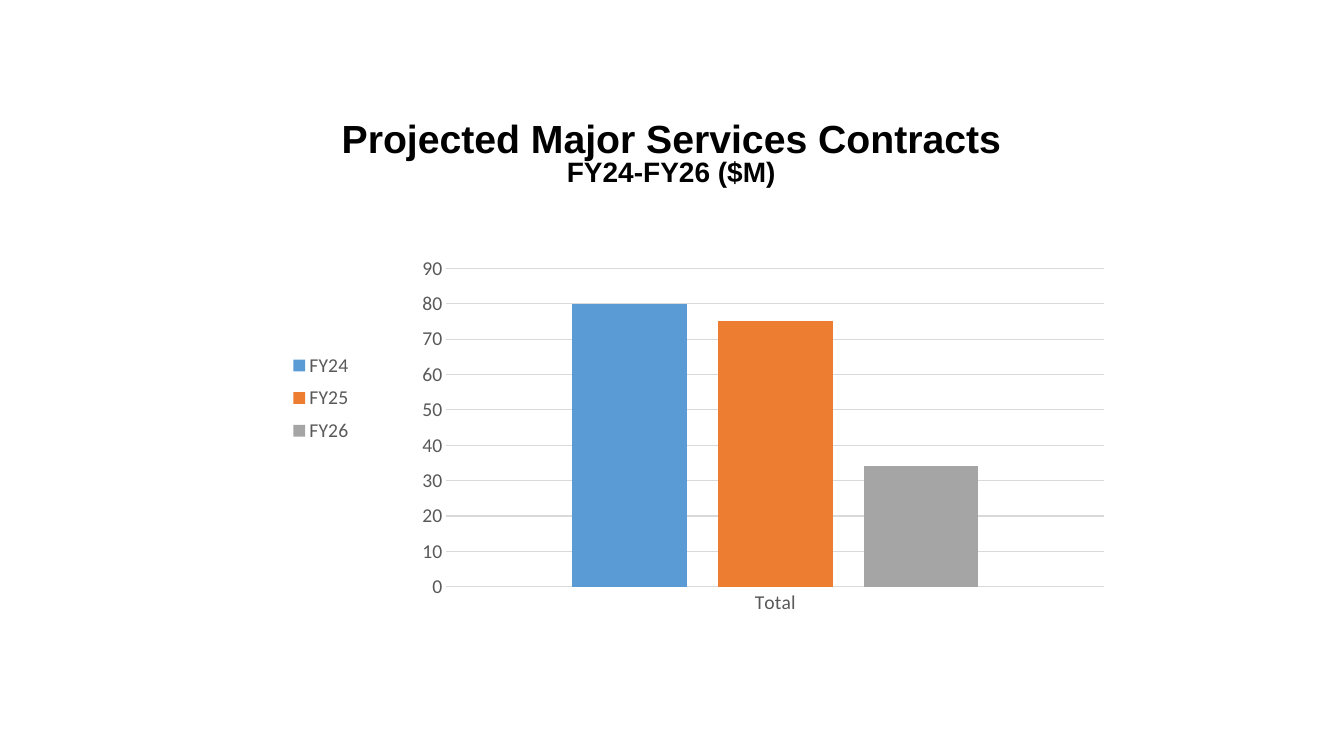
from dataclasses import dataclass

from lxml.etree import SubElement
from pptx import Presentation
from pptx.chart.data import CategoryChartData
from pptx.dml.color import RGBColor
from pptx.enum.chart import XL_CHART_TYPE, XL_LEGEND_POSITION, XL_TICK_MARK
from pptx.enum.text import MSO_ANCHOR, PP_ALIGN
from pptx.oxml import parse_xml
from pptx.oxml.ns import nsdecls, qn
from pptx.util import Pt

GREY_TEXT = "595959"
GREY_LINE = "D9D9D9"


@dataclass
class FiscalYear:
    name: str
    total: int
    fill: str


YEARS = [
    FiscalYear("FY24", 80, "5B9BD5"),
    FiscalYear("FY25", 75, "ED7D31"),
    FiscalYear("FY26", 34, "A5A5A5"),
]


def color(value: str) -> RGBColor:
    return RGBColor.from_string(value)


def set_font(font, *, name: str, size: float, fill: str, bold: bool = False) -> None:
    font.name, font.size, font.bold = name, Pt(size), bold
    font.color.rgb = color(fill)


def add_text(p, text: str, **fmt) -> None:
    r = p.add_run()
    r.text = text
    set_font(r.font, **fmt)


def set_line(line, fill: str) -> None:
    line.color.rgb = color(fill)
    line.width = Pt(0.75)


def set_layout(parent, after, x: float, y: float, w: float, h: float, inner: bool = False) -> None:
    """Place a chart part by fractions of the chart's size."""
    for old in parent.findall(qn("c:layout")):
        parent.remove(old)
    layout = parse_xml(f"<c:layout {nsdecls('c')}/>")
    manual = SubElement(layout, qn("c:manualLayout"))
    target = [("layoutTarget", "inner")] if inner else []
    modes = [("xMode", "edge"), ("yMode", "edge")]
    for tag, val in target + modes + [("x", x), ("y", y), ("w", w), ("h", h)]:
        SubElement(manual, qn(f"c:{tag}")).set("val", str(val))
    if after is None:
        parent.insert(0, layout)
    else:
        after.addnext(layout)


def add_title(s) -> None:
    tf = s.shapes.add_textbox(Pt(88.5), Pt(84.25), Pt(782), Pt(53.25)).text_frame
    tf.word_wrap = True
    tf.vertical_anchor = MSO_ANCHOR.MIDDLE
    p = tf.paragraphs[0]
    p.alignment = PP_ALIGN.CENTER
    p.line_spacing = 0.8
    fmt = dict(name="Arial", fill="000000", bold=True)
    add_text(p, "Projected Major Services Contracts", size=28, **fmt)
    p.add_line_break()
    add_text(p, "FY24-FY26 ($M)", size=20, **fmt)


def add_contract_chart(s) -> None:
    data = CategoryChartData()
    data.categories = ["Total"]
    for year in YEARS:
        data.add_series(year.name, [year.total])
    chart = s.shapes.add_chart(
        XL_CHART_TYPE.COLUMN_CLUSTERED, Pt(170.6), Pt(31.7), Pt(618.5), Pt(421.2), data
    ).chart
    chart.has_title = False
    set_font(chart.font, name="Calibri", size=10, fill="000000")
    label = dict(name="Calibri", size=14, fill=GREY_TEXT)

    # Columns
    plot = chart.plots[0]
    plot.gap_width, plot.overlap, plot.vary_by_categories = 219, -27, False
    for series, year in zip(plot.series, YEARS):
        series.format.fill.solid()
        series.format.fill.fore_color.rgb = color(year.fill)

    # Axes
    for axis in (chart.category_axis, chart.value_axis):
        axis.major_tick_mark = axis.minor_tick_mark = XL_TICK_MARK.NONE
        set_font(axis.tick_labels.font, **label)
    set_line(chart.category_axis.format.line, GREY_LINE)
    values = chart.value_axis
    values.minimum_scale, values.maximum_scale, values.major_unit = 0, 90, 10
    values.format.line.fill.background()
    set_line(values.major_gridlines.format.line, GREY_LINE)

    # Legend
    chart.has_legend = True
    legend = chart.legend
    legend.position = XL_LEGEND_POSITION.RIGHT
    legend.include_in_layout = False
    set_font(legend.font, **label)

    # Plot and legend positions
    legend_xml = legend._element
    set_layout(legend_xml, legend_xml.find(qn("c:legendPos")), 0.05, 0.51, 0.09, 0.18)
    plot_area = chart._chartSpace.find(f".//{qn('c:plotArea')}")
    set_layout(plot_area, None, 0.24, 0.38, 0.76, 0.54, inner=True)


def main() -> None:
    prs = Presentation()
    prs.slide_width, prs.slide_height = Pt(960), Pt(540)
    s = prs.slides.add_slide(prs.slide_layouts[6])
    add_title(s)
    add_contract_chart(s)
    prs.save("out.pptx")


if __name__ == "__main__":
    main()
